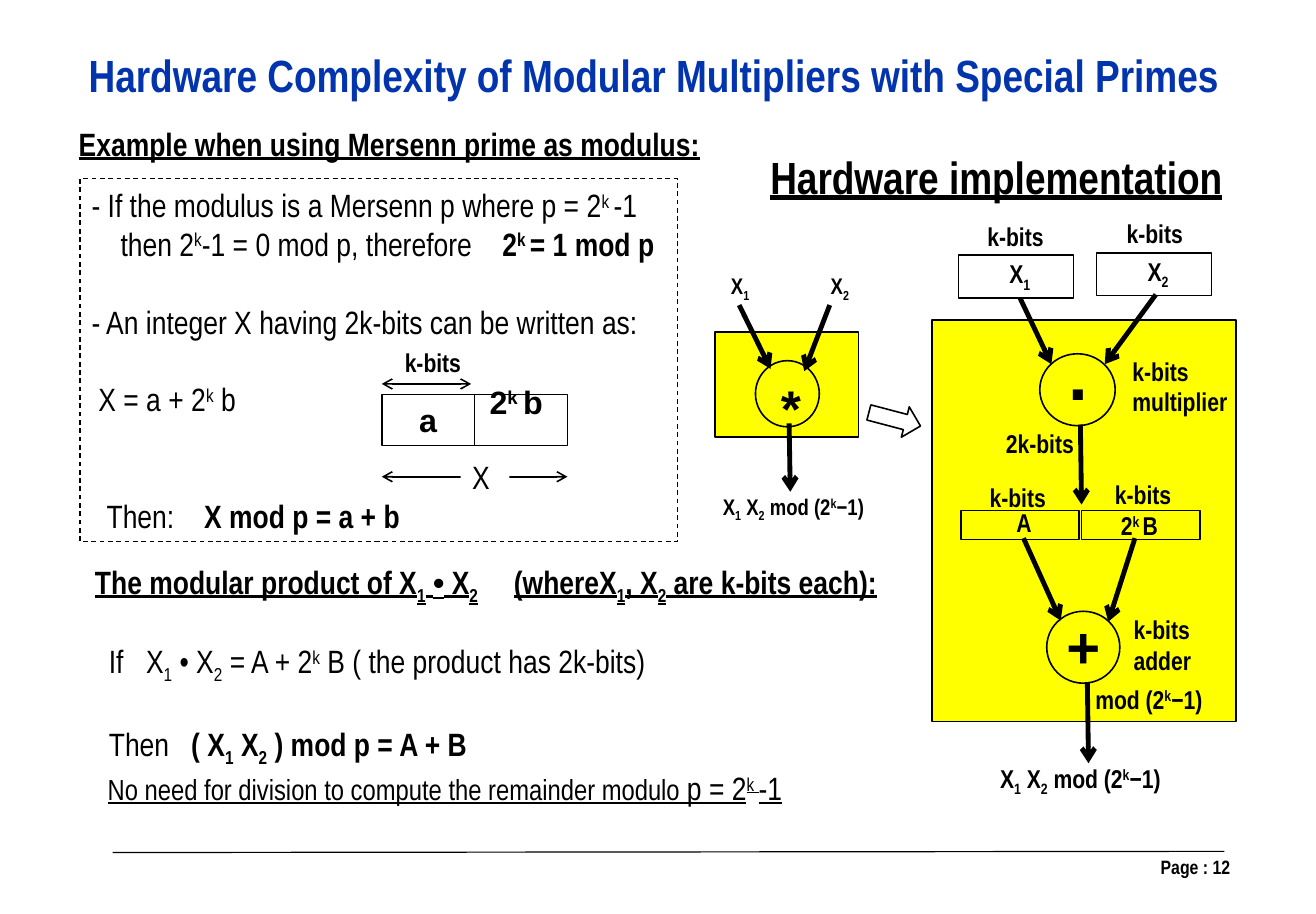
"""Builds the slide on modular multipliers with special primes."""
from dataclasses import dataclass
from typing import Any

from lxml.etree import SubElement
from pptx import Presentation
from pptx.dml.color import RGBColor
from pptx.enum.dml import MSO_LINE as Dash
from pptx.enum.shapes import MSO_CONNECTOR as Link, MSO_SHAPE as Form
from pptx.enum.text import MSO_ANCHOR as Anchor, PP_ALIGN as Align
from pptx.oxml.ns import qn
from pptx.util import Inches, Pt


@dataclass(frozen=True)
class Theme:
    black: RGBColor = RGBColor(0, 0, 0)
    white: RGBColor = RGBColor(255, 255, 255)
    yellow: RGBColor = RGBColor(255, 255, 0)
    blue: RGBColor = RGBColor(0x02, 0x34, 0xAD)
    narrow: str = "Arial Narrow"
    wide: str = "Arial"
    heading: float = 28
    body: float = 20
    note: float = 18
    label: float = 16
    small: float = 14
    footer: float = 12
    dot: float = 44
    plus: float = 36
    star: float = 32
    blank_line: float = 24.2
    thin: float = 0.75
    outline: float = 1
    flow: float = 3


THEME = Theme()
BASELINES = {"^": "30000", "_": "-25000"}
PRODUCT = "X|_1| X|_2| mod (2|^k|−1)"


@dataclass(frozen=True)
class Span:
    text: str
    bold: bool = False
    underline: bool = False
    size: float = THEME.body
    font: str = THEME.narrow
    color: RGBColor = THEME.black


@dataclass(frozen=True)
class Row:
    spans: tuple[Span, ...]
    tabs: tuple[float, ...] = ()
    before: float = 0


@dataclass(frozen=True)
class Label:
    text: str
    left: float
    top: float
    width: float = 0.8
    height: float = 0.37
    size: float = THEME.label
    font: str = THEME.narrow
    bold: bool = True
    underline: bool = False
    color: RGBColor = THEME.black
    align: Align = Align.LEFT
    wrap: bool = True
    fill: RGBColor | None = None


@dataclass(frozen=True)
class Block:
    form: Form
    left: float
    top: float
    width: float
    height: float
    fill: RGBColor | None = None
    rotation: float = 0
    line: float = THEME.outline
    dash: Dash = Dash.SOLID


@dataclass(frozen=True)
class Arrow:
    start: tuple[float, float]
    end: tuple[float, float]
    width: float = THEME.flow
    ends: tuple[str, ...] = ("tailEnd",)


def assign(target: Any, values: dict[str, Any]) -> None:
    """Set every attribute in values on the target."""
    for name, value in values.items():
        setattr(target, name, value)


def paint(shape: Any, color: RGBColor | None) -> None:
    """Fill a shape, or leave it open."""
    if color is None:
        shape.fill.background()
    else:
        shape.fill.solid()
        shape.fill.fore_color.rgb = color


def write_span(para: Any, span: Span) -> None:
    """Write a span, raising ^ parts and lowering _ parts between bars."""
    for part in span.text.split("|"):
        run = para.add_run()
        run.text = part[1:] if part[:1] in BASELINES else part
        assign(run.font, {"name": span.font, "size": Pt(span.size),
                          "bold": span.bold, "underline": span.underline})
        run.font.color.rgb = span.color
        if part[:1] in BASELINES:
            run.font.language_id = None
            run._r.get_or_add_rPr().set("baseline", BASELINES[part[0]])


def write_rows(box: Any, rows: list[Row], align: Align = Align.LEFT, wrap: bool = True) -> None:
    """Write rows as paragraphs of a box."""
    frame = box.text_frame
    assign(frame, {"word_wrap": wrap, "vertical_anchor": Anchor.MIDDLE})
    for index, row in enumerate(rows):
        para = frame.add_paragraph() if index else frame.paragraphs[0]
        assign(para, {"alignment": align, "space_before": Pt(row.before)})
        if row.tabs:
            stops = SubElement(para._p.get_or_add_pPr(), qn("a:tabLst"))
            for stop in row.tabs:
                SubElement(stops, qn("a:tab"), pos=str(Inches(stop)), algn="l")
        for span in row.spans:
            write_span(para, span)


def add_label(page: Any, label: Label) -> None:
    """Add a text box in one format."""
    box = page.shapes.add_textbox(*map(Inches, (label.left, label.top, label.width, label.height)))
    paint(box, label.fill)
    rows = [Row((Span(text, label.bold, label.underline, label.size, label.font, label.color),))
            for text in label.text.split("\n")]
    write_rows(box, rows, label.align, label.wrap)


def add_block(page: Any, block: Block) -> Any:
    """Add an outlined preset shape."""
    shape = page.shapes.add_shape(
        block.form, *map(Inches, (block.left, block.top, block.width, block.height)))
    paint(shape, block.fill)
    shape.shadow.inherit = False
    shape.rotation = block.rotation
    shape.line.color.rgb = THEME.black
    assign(shape.line, {"width": Pt(block.line), "dash_style": block.dash})
    return shape


def add_arrow(page: Any, arrow: Arrow) -> None:
    """Add a straight line with its arrowheads."""
    link = page.shapes.add_connector(Link.STRAIGHT, *map(Inches, arrow.start + arrow.end))
    link.line.color.rgb = THEME.black
    link.line.width = Pt(arrow.width)
    for end in arrow.ends:
        SubElement(link.line._get_or_add_ln(), qn(f"a:{end}"), type="arrow")
    SubElement(link.element.spPr, qn("a:effectLst"))


T, BOTH = THEME, ("headEnd", "tailEnd")
MODULUS = [
    Row((Span("- If the modulus is a Mersenn p where p = 2|^k |-1"),)),
    Row((Span("\tthen 2|^k|-1 = 0 mod p, therefore\t"), Span("2|^k |= 1 mod p", True)), (0.25, 3.54)),
    Row((Span("- An integer X having 2k-bits can be written as:"),), (), T.blank_line),
    Row((Span("\tX = a + 2|^k| b"),), (0.06,), T.blank_line),
    Row((Span("\tThen:\t"), Span("X mod p = a + b", True)), (0.13, 0.97), 2 * T.blank_line),
]
MODULAR_PRODUCT = [
    Row((Span("The modular product of X|_1| ", True, True), Span("•", True, True, font=T.wide),
         Span(" X|_2|\t(whereX|_1|, X|_2| are k-bits each):", True, True)), (3.61,)),
    Row((Span("\tIf\tX|_1| • X|_2| = A + 2|^k| B ( the product has 2k-bits)"),), (0.12, 0.44), 21.8),
    Row((Span("\tThen\t"), Span("( X|_1| X|_2| ) mod p = A + B", True)), (0.12, 0.83), T.blank_line),
    Row((Span("\t", size=T.note),
         Span("No need for division to compute the remainder modulo ", underline=True, size=T.note),
         Span("p = 2|^k |-1", underline=True)), (0.11,)),
]
BLOCKS = [
    Block(Form.RECTANGLE, 6.16, 2.86, 1.24, 0.91, T.yellow),
    Block(Form.OVAL, 6.51, 3.11, 0.55, 0.57),
    Block(Form.RIGHT_ARROW, 7.48, 3.48, 0.46, 0.27, rotation=14.7),
    Block(Form.RECTANGLE, 8.03, 2.76, 2.62, 3.46, T.yellow),
    Block(Form.OVAL, 8.96, 3.05, 0.65, 0.62),
    Block(Form.OVAL, 9.02, 5.27, 0.63, 0.62),
    *(Block(Form.RECTANGLE, left, 4.4, 1.02, 0.25) for left in (8.28, 9.32)),
    *(Block(Form.RECTANGLE, left, top, 0.99, 0.37) for left, top in ((8.26, 2.2), (9.45, 2.18))),
    Block(Form.RECTANGLE, 4.09, 3.4, 0.8, 0.44),
]
ARROWS = [
    Arrow((0.97, 7.35), (10.55, 7.34), T.thin, ()),
    Arrow((3.29, 3.31), (4.06, 3.31), T.outline, BOTH),
    Arrow((3.29, 4.11), (4.89, 4.11), T.outline, BOTH),
    *(Arrow(*points) for points in (
        ((7.15, 2.63), (6.93, 3.2)), ((6.37, 2.63), (6.64, 3.18)), ((6.8, 3.65), (6.81, 4.24)),
        ((9.96, 2.54), (9.52, 3.14)), ((8.79, 2.57), (9.06, 3.14)), ((9.31, 3.66), (9.32, 4.35)),
        ((9.78, 4.64), (9.55, 5.36)), ((8.82, 4.64), (9.14, 5.35)), ((9.37, 5.88), (9.38, 6.58)))),
]
LABELS = [
    Label("Hardware Complexity of Modular Multipliers with Special Primes ", 0.58, 0.36, 10.19, 0.57,
          T.heading, color=T.blue, align=Align.CENTER, wrap=False),
    Label("Example when using Mersenn prime as modulus:", 0.58, 1.02, 6.72, 0.44, T.body, underline=True),
    Label("Hardware implementation", 6.54, 1.24, 4.24, 0.57, T.heading, underline=True),
    Label("Page : 12", 8.14, 7.31, 2.56, 0.33, T.footer, align=Align.RIGHT),
    Label("X", 3.97, 3.89, 0.42, 0.44, T.body, bold=False, fill=T.white),
    Label("2|^k |b", 4.12, 3.24, 0.8, 0.44, T.body, T.wide),
    Label("X|_1", 6.2, 2.31, 0.5, 0.34, T.small),
    Label("X|_2", 7.06, 2.31, 0.5, 0.34, T.small),
    Label(PRODUCT, 6.13, 4.21, 1.62, 0.34, T.small),
    Label(PRODUCT, 8.52, 6.54, 1.94),
    Label("*", 6.63, 3.19, 0.34, 0.64, T.star, T.wide),
    Label(".", 9.11, 2.79, 0.41, 0.84, T.dot, T.wide),
    Label("+", 9.09, 5.21, 0.41, 0.71, T.plus, T.wide),
    *(Label("k-bits", left, top) for left, top in (
        (3.39, 2.94), (8.41, 1.85), (9.61, 1.83), (8.43, 4.1), (9.51, 4.08))),
    Label("X|_1", 8.6, 2.19),
    Label("X|_2", 9.79, 2.17),
    Label("2k-bits", 8.57, 3.64),
    Label("A", 8.66, 4.32, 0.35),
    Label("2|^k |B", 9.56, 4.34, 0.6),
    Label("k-bits\nmultiplier", 9.66, 3.01, 1.05, 0.64),
    Label("k-bits\nadder", 9.67, 5.24, 1.05, 0.64),
    Label("mod (2|^k|−1)", 9.34, 5.84, 1.28),
]


def main() -> None:
    """Build and save the deck."""
    deck = Presentation()
    assign(deck, {"slide_width": Inches(11.34), "slide_height": Inches(7.88)})
    page = deck.slides.add_slide(deck.slide_layouts[6])
    modulus = Block(Form.RECTANGLE, 0.69, 1.54, 5.15, 3.13, line=T.thin, dash=Dash.DASH)
    write_rows(add_block(page, modulus), MODULUS)
    write_rows(page.shapes.add_textbox(*map(Inches, (0.72, 4.86, 7, 2.09))), MODULAR_PRODUCT)
    for block in BLOCKS:
        add_block(page, block)
    low_half = add_block(page, Block(Form.RECTANGLE, 3.29, 3.4, 0.8, 0.44))
    write_rows(low_half, [Row((Span("a", True, font=T.wide),))], Align.CENTER)
    for arrow in ARROWS:
        add_arrow(page, arrow)
    for label in LABELS:
        add_label(page, label)
    deck.save("out.pptx")


if __name__ == "__main__":
    main()
